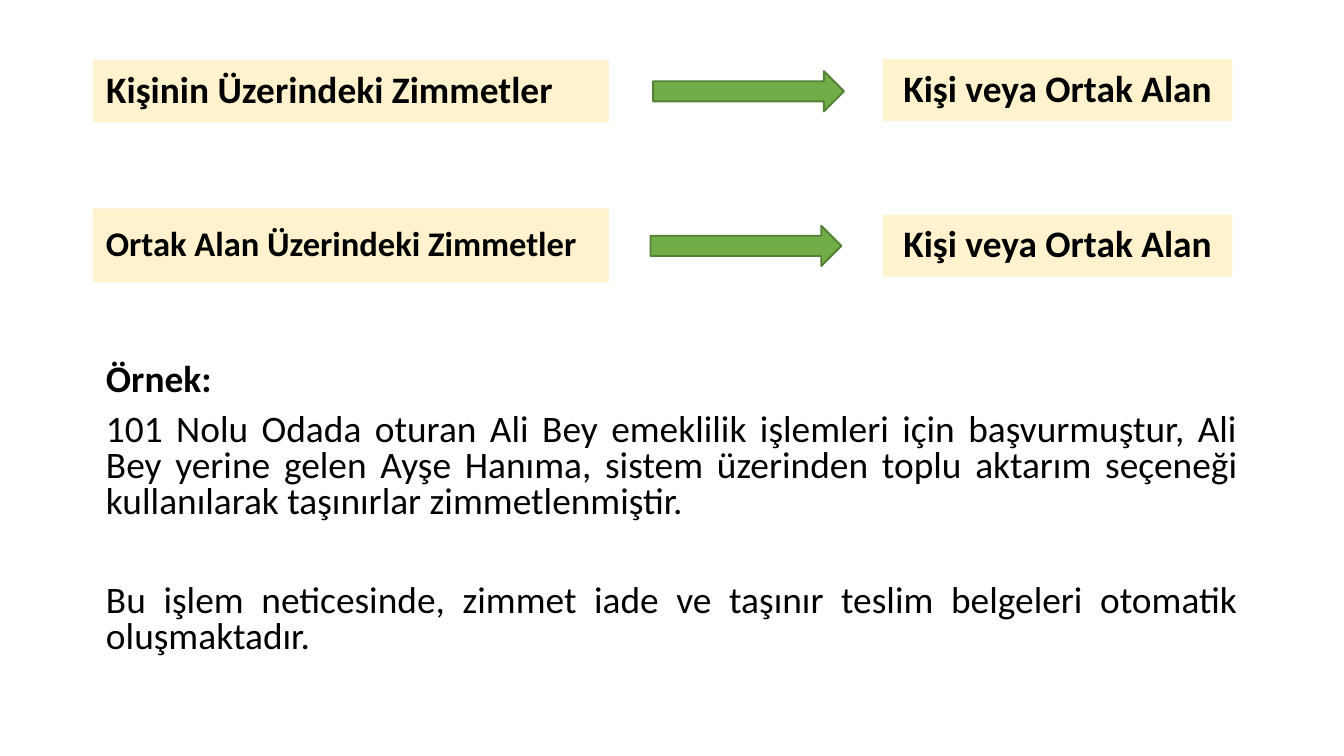
from pptx import Presentation
from pptx.dml.color import RGBColor
from pptx.enum.shapes import MSO_SHAPE as Shape
from pptx.enum.text import MSO_ANCHOR as Anchor, MSO_AUTO_SIZE as AutoSize, PP_ALIGN as Align
from pptx.util import Inches, Pt

COLORS = {"cream": "FFF2CC", "green": "70AD47", "dark_green": "538035", "text": "000000"}
FONT = "Calibri"
TITLE_ONLY = 5

LEFT = 0.69
TARGET_LEFT, TARGET_WIDTH = 6.57, 2.6
BOX_HEIGHT = 0.46
TARGET = "Kişi veya Ortak Alan"

# text, bold, space before in points
EXAMPLE = [
    ("Örnek:", True, 7.5),
    ("101 Nolu Odada oturan Ali Bey emeklilik işlemleri için başvurmuştur, "
     "Ali Bey yerine gelen Ayşe Hanıma, sistem üzerinden toplu aktarım "
     "seçeneği kullanılarak taşınırlar zimmetlenmiştir.", False, 7.5),
    ("Bu işlem neticesinde, zimmet iade ve taşınır teslim belgeleri "
     "otomatik oluşmaktadır.", False, 34),
]


def color(name):
    return RGBColor.from_string(COLORS[name])


def write(para, text, size=20, bold=True, align=Align.LEFT, spacing=0.9, before=0):
    para.alignment = align
    para.line_spacing = spacing
    para.space_before = Pt(before)
    span = para.add_run()
    span.text = text
    span.font.name = FONT
    span.font.size = Pt(size)
    span.font.bold = bold
    span.font.color.rgb = color("text")


class Page:
    def __init__(self, deck):
        self.slide = deck.slides.add_slide(deck.slide_layouts[TITLE_ONLY])

    def fill_label(self, box, text, **style):
        """Give a shape the cream fill and one middle-anchored line of text."""
        box.fill.solid()
        box.fill.fore_color.rgb = color("cream")
        box.line.fill.background()
        frame = box.text_frame
        frame.word_wrap = True
        frame.auto_size = AutoSize.NONE
        frame.vertical_anchor = Anchor.MIDDLE
        write(frame.paragraphs[0], text, **style)

    def title(self, text, left, top, width, height):
        box = self.slide.shapes.title
        box.left, box.top = Inches(left), Inches(top)
        box.width, box.height = Inches(width), Inches(height)
        self.fill_label(box, text)

    def shape(self, kind, left, top, width, height):
        box = self.slide.shapes.add_shape(
            kind, Inches(left), Inches(top), Inches(width), Inches(height))
        box.shadow.inherit = False
        return box

    def label(self, text, left, top, width, height, **style):
        self.fill_label(self.shape(Shape.RECTANGLE, left, top, width, height), text, **style)

    def arrow(self, left, top):
        arrow = self.shape(Shape.RIGHT_ARROW, left, top, 1.42, 0.3)
        arrow.fill.solid()
        arrow.fill.fore_color.rgb = color("green")
        arrow.line.color.rgb = color("dark_green")
        arrow.line.width = Pt(1)

    def body(self, paragraphs, left, top, width, height):
        box = self.slide.shapes.add_textbox(
            Inches(left), Inches(top), Inches(width), Inches(height))
        frame = box.text_frame
        frame.word_wrap = True
        for index, (text, bold, before) in enumerate(paragraphs):
            para = frame.add_paragraph() if index else frame.paragraphs[0]
            write(para, text, bold=bold, align=Align.JUSTIFY, spacing=0.8, before=before)


def main():
    deck = Presentation()
    deck.slide_width = Inches(10)
    deck.slide_height = deck.slide_width * 9 // 16
    page = Page(deck)
    page.title("Kişinin Üzerindeki Zimmetler", LEFT, 0.45, 3.84, BOX_HEIGHT)
    page.body(EXAMPLE, LEFT, 2.66, 8.62, 2.41)
    page.label("Ortak Alan Üzerindeki Zimmetler", LEFT, 1.55, 3.84, 0.55, size=18.5)
    for top in (0.44, 1.6):
        page.label(TARGET, TARGET_LEFT, top, TARGET_WIDTH, BOX_HEIGHT, align=Align.CENTER)
    for left, top in ((4.86, 0.53), (4.84, 1.68)):
        page.arrow(left, top)
    deck.save("out.pptx")


if __name__ == "__main__":
    main()
